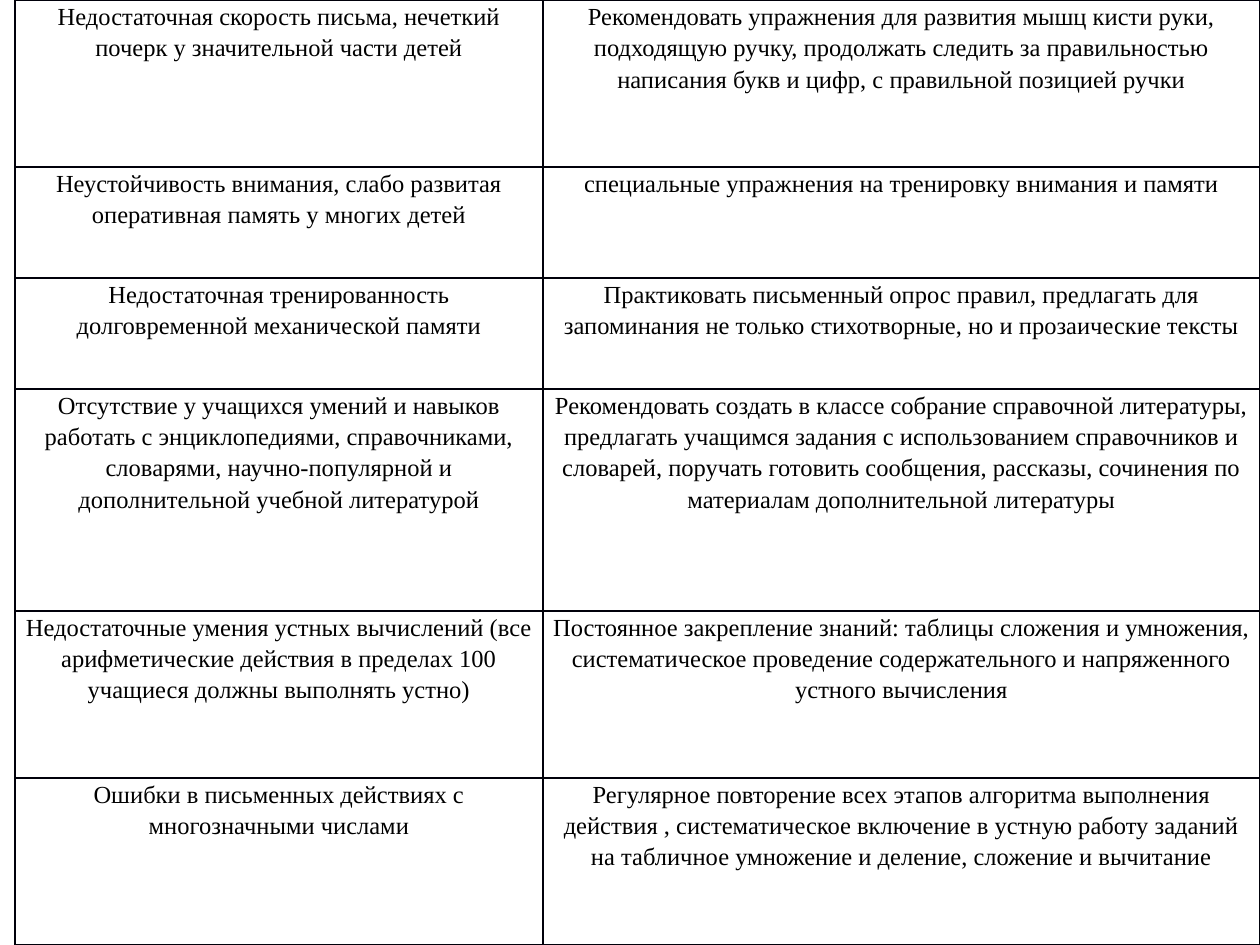
from lxml.etree import SubElement
from pptx import Presentation
from pptx.dml.color import RGBColor
from pptx.enum.text import MSO_ANCHOR, PP_ALIGN
from pptx.oxml.ns import qn
from pptx.util import Pt

EMU_PER_PX = 914400 / 126
PAGE_WIDTH, PAGE_HEIGHT = 1260, 945
COLOURS = {"text": "000000", "border": "00000A"}

TABLE_LEFT = 15
COLUMN_WIDTHS = [528, 717]
# Each row takes a share of the page height
ROW_SHARES = [3, 2, 2, 4, 3, 3]

# Difficulty and recommendation, row by row
ROWS = [
    ("Недостаточная скорость письма, нечеткий почерк у значительной части детей",
     "Рекомендовать упражнения для развития мышц кисти руки, подходящую ручку, "
     "продолжать следить за правильностью написания букв и цифр, "
     "с правильной позицией ручки"),
    ("Неустойчивость внимания, слабо развитая оперативная память у многих детей",
     "специальные упражнения на тренировку внимания и памяти"),
    ("Недостаточная тренированность долговременной механической памяти",
     "Практиковать письменный опрос правил, предлагать для запоминания "
     "не только стихотворные, но и прозаические тексты"),
    ("Отсутствие у учащихся умений и навыков работать с энциклопедиями, "
     "справочниками, словарями, научно-популярной и дополнительной учебной литературой",
     "Рекомендовать создать в классе собрание справочной литературы, предлагать "
     "учащимся задания с использованием справочников и словарей, поручать готовить "
     "сообщения, рассказы, сочинения по материалам дополнительной литературы"),
    ("Недостаточные умения устных вычислений (все арифметические действия "
     "в пределах 100 учащиеся должны выполнять устно)",
     "Постоянное закрепление знаний: таблицы сложения и умножения, систематическое "
     "проведение содержательного и напряженного устного вычисления"),
    ("Ошибки в письменных действиях с многозначными числами",
     "Регулярное повторение всех этапов алгоритма выполнения действия , "
     "систематическое включение в устную работу заданий на табличное умножение "
     "и деление, сложение и вычитание"),
]


def px(length):
    return round(length * EMU_PER_PX)


def apply(target, values):
    for name, value in values.items():
        setattr(target, name, value)


class SlideBuilder:
    cell_format = {"margin_left": px(10), "margin_right": px(10),
                   "margin_top": 0, "margin_bottom": 0,
                   "vertical_anchor": MSO_ANCHOR.TOP}
    para_format = {"alignment": PP_ALIGN.CENTER, "line_spacing": 1.15}
    font_format = {"name": "Times New Roman", "size": Pt(14), "bold": False}
    table_format = {"first_row": False, "horz_banding": False}

    def __init__(self, page):
        self.page = page

    def table(self, left, top, widths, heights, rows):
        frame = self.page.shapes.add_table(
            len(heights), len(widths), px(left), px(top),
            px(sum(widths)), px(sum(heights)))
        table = frame.table
        apply(table, self.table_format)
        for column, width in zip(table.columns, widths):
            column.width = px(width)
        for row, height, texts in zip(table.rows, heights, rows):
            row.height = px(height)
            for cell, text in zip(row.cells, texts):
                self.cell(cell, text)

    def cell(self, cell, text):
        apply(cell, self.cell_format)
        para = cell.text_frame.paragraphs[0]
        apply(para, self.para_format)
        span = para.add_run()
        span.text = text
        apply(span.font, self.font_format)
        span.font.color.rgb = RGBColor.from_string(COLOURS["text"])
        # Borders come before the fill in the cell properties
        self.borders(cell)
        cell.fill.background()

    def borders(self, cell):
        properties = cell._tc.get_or_add_tcPr()
        for side in ("a:lnL", "a:lnR", "a:lnT", "a:lnB"):
            line = SubElement(properties, qn(side), w=str(Pt(1)))
            fill = SubElement(line, qn("a:solidFill"))
            SubElement(fill, qn("a:srgbClr"), val=COLOURS["border"])


def main():
    deck = Presentation()
    deck.slide_width, deck.slide_height = px(PAGE_WIDTH), px(PAGE_HEIGHT)
    page = deck.slides.add_slide(deck.slide_layouts[6])

    # Full-height table of difficulties and recommendations
    heights = [round(PAGE_HEIGHT * share / sum(ROW_SHARES)) for share in ROW_SHARES]
    SlideBuilder(page).table(TABLE_LEFT, 0, COLUMN_WIDTHS, heights, ROWS)

    deck.save("out.pptx")


if __name__ == "__main__":
    main()
